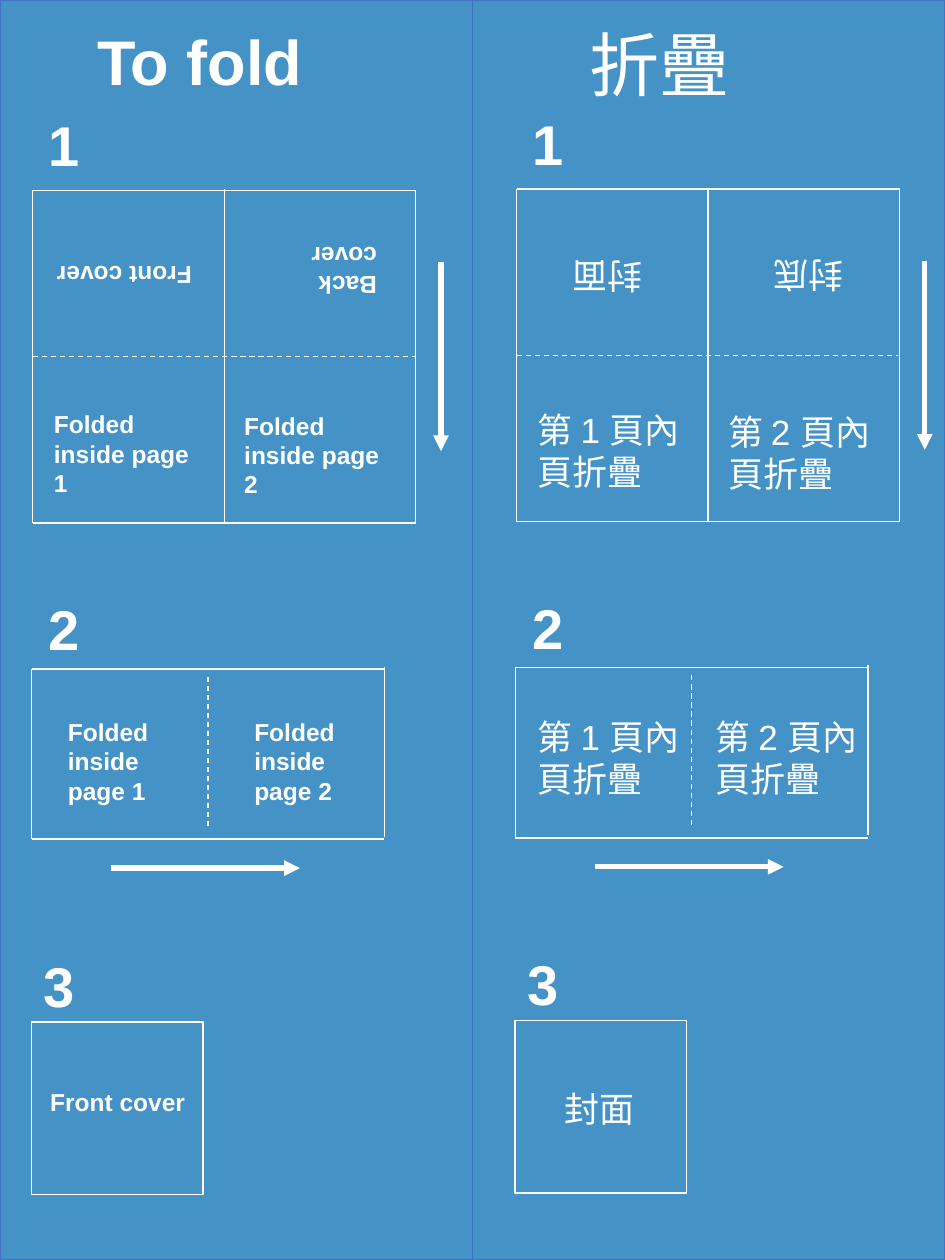
"""Build a bilingual sheet that shows how to fold a small booklet."""
from lxml import etree
from pptx import Presentation
from pptx import util as u
from pptx.dml.color import RGBColor
from pptx.enum import dml, shapes, text
from pptx.oxml import ns

COLORS = {"backdrop": "4492C6", "border": "4472C4", "divider": "3F6FC3", "ink": "FFFFFF"}
FONT = "Arial"
CHINESE_SHIFT = (3.84, -0.01)

STEP_NUMBERS = [("1", 0.29, 0.83), ("2", 0.29, 4.67), ("3", 0.25, 7.5)]
SOLID_LINES = [
    (0.26, 1.51, 3.3, 1.51), (0.26, 4.15, 3.3, 4.15),
    (0.26, 1.51, 0.26, 4.15), (1.78, 1.5, 1.78, 4.15), (3.3, 1.51, 3.3, 4.15),
    (0.25, 5.31, 3.05, 5.31), (0.25, 6.66, 3.05, 6.66),
    (0.25, 5.31, 0.25, 6.66), (3.05, 5.29, 3.05, 6.64),
]
FOLD_LINES = [(0.26, 2.83, 3.29, 2.83), (1.65, 5.37, 1.65, 6.56)]
ARROWS = [(3.5, 2.08, 3.5, 3.58), (0.88, 6.89, 2.38, 6.89)]

ENGLISH_LABELS = [
    ("Front cover", (0.25, 2.02, 1.37, 0.34), 180),
    ("Back cover", (1.88, 1.87, 1.21, 0.57), 180),
    ("Folded inside page 1", (0.33, 3.2, 1.36, 0.81), 0),
    ("Folded inside page 2", (1.84, 3.21, 1.36, 0.81), 0),
    ("Folded inside page 1", (0.44, 5.64, 1.08, 0.81), 0),
    ("Folded inside page 2", (1.92, 5.64, 0.96, 0.81), 0),
    ("Front cover", (0.3, 8.58, 1.37, 0.34), 0),
]
CHINESE_LABELS = [
    ("封面", (3.83, 2.08, 1.37, 0.34), 180),
    ("封底", (5.58, 1.84, 1.21, 0.57), 180),
    ("第 1 頁內頁折疊", (4.17, 3.19, 1.36, 0.81), 0),
    ("第 2 頁內頁折疊", (5.68, 3.21, 1.36, 0.81), 0),
    ("第 1 頁內頁折疊", (4.17, 5.63, 1.33, 0.81), 0),
    ("第 2 頁內頁折疊", (5.58, 5.63, 1.33, 0.81), 0),
    ("封面", (4.38, 8.58, 1.37, 0.34), 0),
]


def color(name):
    return RGBColor.from_string(COLORS[name])


def write(box, words, size, bold):
    frame = box.text_frame
    frame.word_wrap = True
    frame.auto_size = text.MSO_AUTO_SIZE.NONE
    frame.vertical_anchor = text.MSO_ANCHOR.TOP
    frame.text = words
    para = frame.paragraphs[0]
    para.alignment = text.PP_ALIGN.LEFT
    para.line_spacing = 1.0
    para.space_before = u.Pt(0)
    para.font.name = FONT
    para.font.size = u.Pt(size)
    para.font.bold = bold
    para.font.color.rgb = color("ink")


def add_label(page, words, place, size, bold=False, rotation=0):
    box = page.shapes.add_textbox(*map(u.Inches, place))
    box.rotation = rotation
    write(box, words, size, bold)


def add_line(page, ends, width=0.75, ink="ink", dashed=False, arrow=False):
    line = page.shapes.add_connector(shapes.MSO_CONNECTOR.STRAIGHT, *map(u.Inches, ends))
    line.line.color.rgb = color(ink)
    line.line.width = u.Pt(width)
    if dashed:
        line.line.dash_style = dml.MSO_LINE.DASH
    if arrow:
        etree.SubElement(line.line._get_or_add_ln(), ns.qn("a:tailEnd"), type="triangle")
    etree.SubElement(line._element.spPr, ns.qn("a:effectLst"))


def add_rectangle(page, place, outline, fill=None):
    rectangle = page.shapes.add_shape(shapes.MSO_SHAPE.RECTANGLE, *map(u.Inches, place))
    rectangle.shadow.inherit = False
    if fill:
        rectangle.fill.solid()
        rectangle.fill.fore_color.rgb = color(fill)
    else:
        rectangle.fill.background()
    rectangle.line.color.rgb = color(outline)
    rectangle.line.width = u.Pt(1)
    return rectangle


def add_title(page, words, place):
    title = page.shapes.title
    title.left, title.top, title.width, title.height = map(u.Inches, place)
    write(title, words, 36, True)


def add_steps(page, labels, size, bold, shift=(0, 0)):
    dx, dy = shift

    def moved(ends):
        return [value + delta for value, delta in zip(ends, (dx, dy, dx, dy))]

    for ends in SOLID_LINES:
        add_line(page, moved(ends))
    for ends in FOLD_LINES:
        add_line(page, moved(ends), dashed=True)
    for ends in ARROWS:
        add_line(page, moved(ends), width=3, arrow=True)
    add_rectangle(page, (0.25 + dx, 8.11 + dy, 1.36, 1.37), "ink")
    for number, left, top in STEP_NUMBERS:
        add_label(page, number, (left + dx, top + dy, 0.71, 0.64), 32, True)
    for words, place, rotation in labels:
        add_label(page, words, place, size, bold, rotation)


def main():
    deck = Presentation()
    deck.slide_width, deck.slide_height = u.Inches(7.5), u.Inches(10)
    page = deck.slides.add_slide(deck.slide_layouts[5])
    backdrop = add_rectangle(page, (0, 0, 7.5, 10), "border", "backdrop")
    page.shapes.title._element.addprevious(backdrop._element)
    add_title(page, "To fold", (0.67, 0.13, 2.33, 0.71))
    add_steps(page, ENGLISH_LABELS, 14, True)
    add_line(page, (3.75, 0, 3.75, 10), ink="divider")
    add_label(page, "折疊", (4.58, 0.12, 3.19, 0.71), 40)
    add_steps(page, CHINESE_LABELS, 20, False, CHINESE_SHIFT)
    deck.save("out.pptx")


if __name__ == "__main__":
    main()
